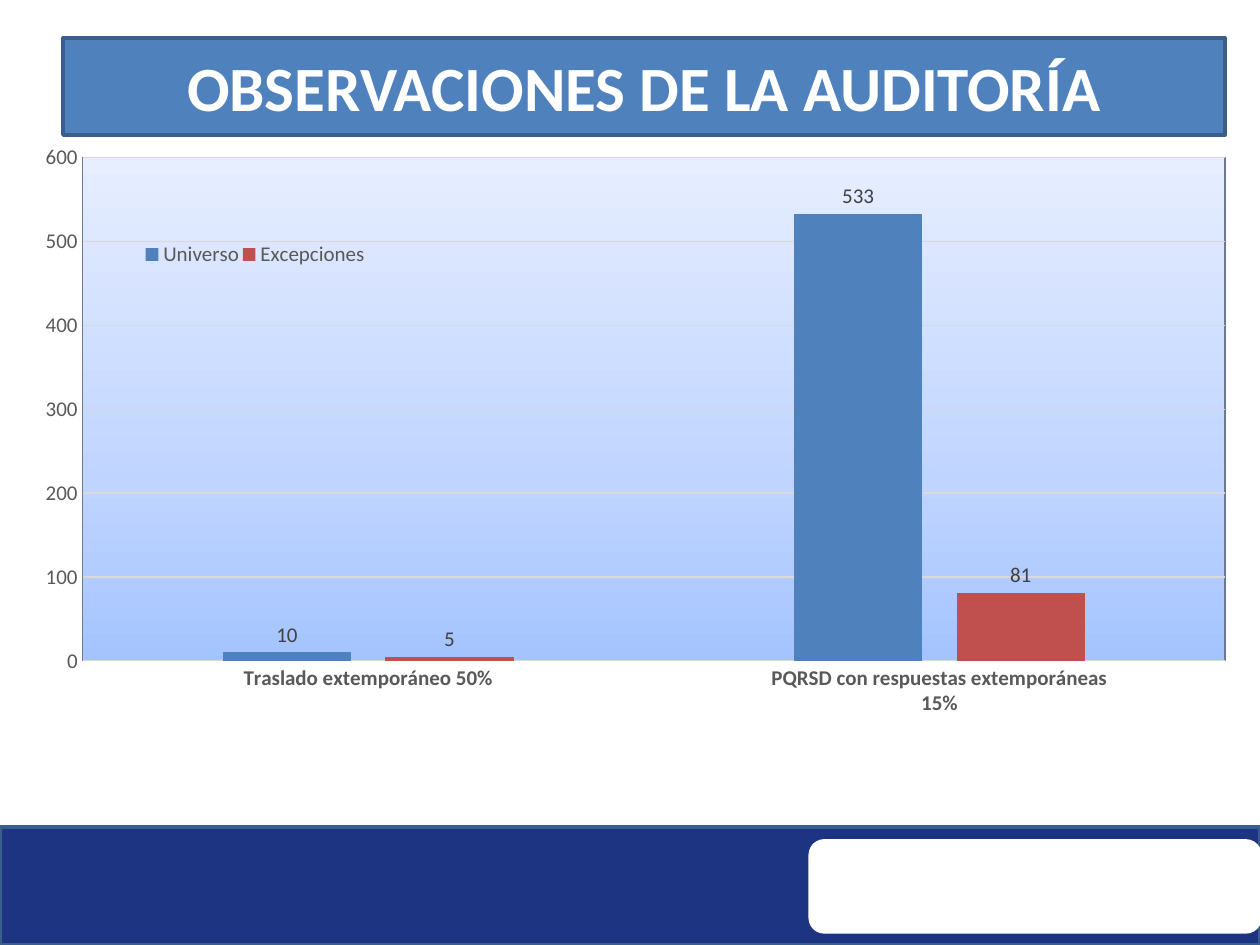
"""Build a slide with a clustered column chart of audit observations."""
from pptx import Presentation
from pptx.chart.data import CategoryChartData
from pptx.dml.color import RGBColor
from pptx.enum.chart import XL_CHART_TYPE as ChartType, XL_LABEL_POSITION as LabelPosition
from pptx.enum.chart import XL_LEGEND_POSITION as LegendPosition, XL_TICK_MARK as TickMark
from pptx.enum.shapes import MSO_SHAPE as Shape
from pptx.enum.text import MSO_ANCHOR as Anchor, PP_ALIGN as Align
from pptx.oxml import parse_xml
from pptx.oxml.ns import nsdecls, qn
from pptx.util import Pt

COLORS = {
    "navy": "1C3481", "edge": "3A5F8C", "white": "FFFFFF",
    "blue": "4F81BD", "red": "C0504D", "text": "595959",
    "label": "404040", "grid": "D9D9D9", "frame": "6B7A90",
}
GRADIENT = [(0, "A4C4FF"), (35, "BFD4FF"), (100, "E6EEFF")]


def style_font(font, size, color, bold=False):
    font.name = "Calibri"
    font.size = Pt(size)
    font.bold = bold
    font.color.rgb = RGBColor.from_string(COLORS[color])


def set_layout(parent, index, target, x, y, width, height):
    for old in parent.findall(qn("c:layout")):
        parent.remove(old)
    inner = f'<c:layoutTarget val="{target}"/>' if target else ""
    modes = '<c:xMode val="edge"/><c:yMode val="edge"/>'
    sizes = zip("xywh", (x, y, width, height))
    values = "".join(f'<c:{key} val="{value}"/>' for key, value in sizes)
    parent.insert(index, parse_xml(
        f'<c:layout {nsdecls("c")}><c:manualLayout>{inner}{modes}{values}'
        "</c:manualLayout></c:layout>"))


deck = Presentation()
deck.slide_width, deck.slide_height = Pt(720), Pt(540)
page = deck.slides.add_slide(deck.slide_layouts[5])

footer = page.shapes.add_shape(Shape.RECTANGLE, Pt(0), Pt(472.5), Pt(720), Pt(67.5))
panel = page.shapes.add_shape(Shape.ROUNDED_RECTANGLE, Pt(462), Pt(479.5), Pt(259), Pt(54))
for box, color in ((footer, "navy"), (panel, "white")):
    box.shadow.inherit = False
    box.fill.solid()
    box.fill.fore_color.rgb = RGBColor.from_string(COLORS[color])
footer.line.color.rgb = RGBColor.from_string(COLORS["edge"])
footer.line.width = Pt(2)
panel.line.fill.background()

title = page.shapes.title
title.left, title.top, title.width, title.height = Pt(36), Pt(21.6), Pt(664), Pt(55.6)
title.fill.solid()
title.fill.fore_color.rgb = RGBColor.from_string(COLORS["blue"])
title.line.color.rgb = RGBColor.from_string(COLORS["edge"])
title.line.width = Pt(2)
title.text_frame.text = "OBSERVACIONES DE LA AUDITORÍA"
title.text_frame.vertical_anchor = Anchor.MIDDLE
heading = title.text_frame.paragraphs[0]
heading.alignment = Align.CENTER
style_font(heading.font, 36, "white", True)

data = CategoryChartData()
data.categories = ["Traslado extemporáneo 50%", "PQRSD con respuestas extemporáneas\n15%"]
data.add_series("Universo", (10, 533))
data.add_series("Excepciones", (5, 81))
chart = page.shapes.add_chart(
    ChartType.COLUMN_CLUSTERED, Pt(20), Pt(82.8), Pt(680.4), Pt(368.6), data).chart
chart.has_title = False
chart.font.name = "Calibri"
chart.font.size = Pt(10)

plot = chart.plots[0]
plot.gap_width = 219
plot.overlap = -27
plot.vary_by_categories = False
for series, color in zip(plot.series, ("blue", "red")):
    series.format.fill.solid()
    series.format.fill.fore_color.rgb = RGBColor.from_string(COLORS[color])
    labels = series.data_labels
    labels.show_value = True
    labels.position = LabelPosition.OUTSIDE_END
    style_font(labels.font, 12, "label")

for axis, bold in ((chart.category_axis, True), (chart.value_axis, False)):
    axis.major_tick_mark = axis.minor_tick_mark = TickMark.NONE
    style_font(axis.tick_labels.font, 12, "text", bold)
values = chart.value_axis
values.minimum_scale, values.maximum_scale, values.major_unit = 0, 600, 100
values.format.line.fill.background()
values.has_major_gridlines = True
for line in (chart.category_axis.format.line, values.major_gridlines.format.line):
    line.color.rgb = RGBColor.from_string(COLORS["grid"])
    line.width = Pt(0.75)

chart.has_legend = True
legend = chart.legend
legend.position = LegendPosition.BOTTOM
legend.include_in_layout = False
style_font(legend.font, 12, "text")
set_layout(legend._element, 1, None, 0.09, 0.14, 0.19, 0.06)

area = chart._chartSpace.chart.plotArea
set_layout(area, 0, "inner", 0.04, 0.02, 0.96, 0.78)
stops = "".join(
    f'<a:gs pos="{place * 1000}"><a:srgbClr val="{color}"/></a:gs>' for place, color in GRADIENT)
area.append(parse_xml(
    f'<c:spPr {nsdecls("c", "a")}><a:gradFill><a:gsLst>{stops}</a:gsLst>'
    f'<a:lin ang="16200000" scaled="0"/></a:gradFill><a:ln w="{Pt(0.75)}"><a:solidFill>'
    f'<a:srgbClr val="{COLORS["frame"]}"/></a:solidFill></a:ln></c:spPr>'))

deck.save("out.pptx")
